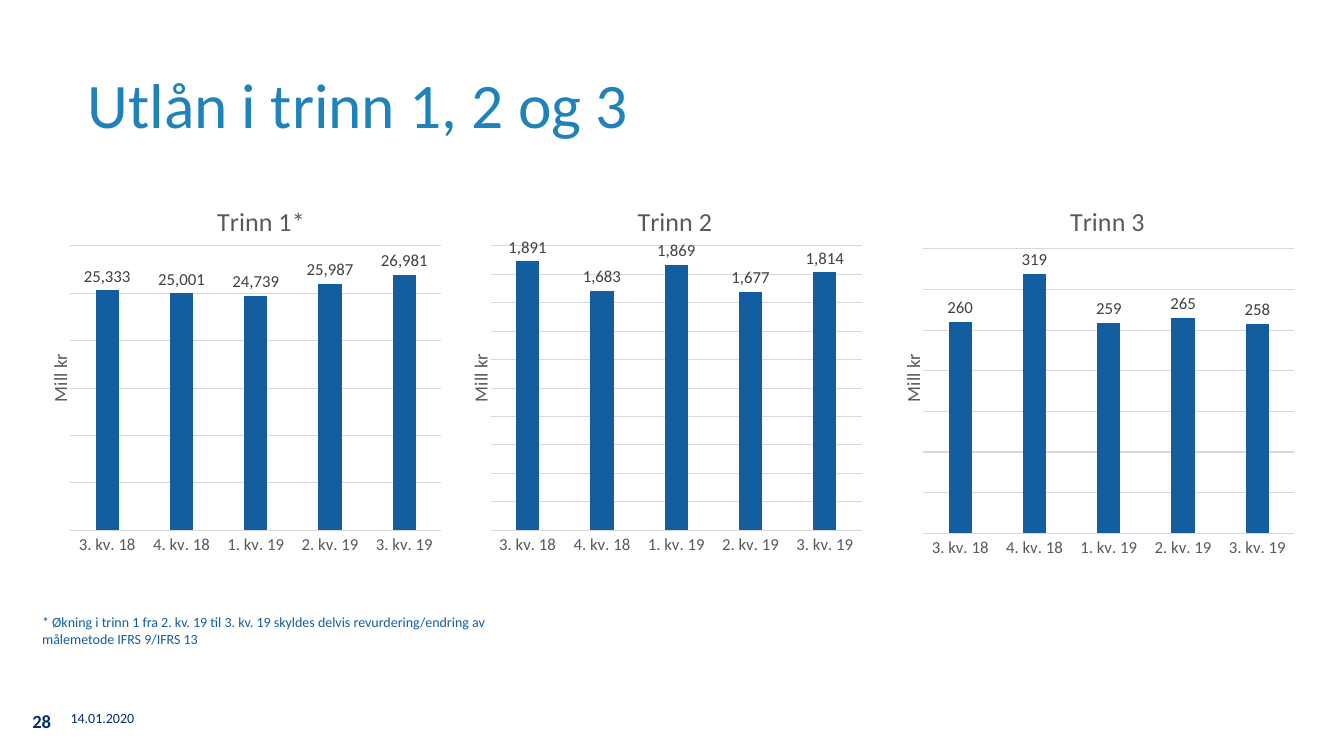
from dataclasses import dataclass
from lxml.etree import SubElement as Sub
from pptx import Presentation
from pptx.chart.data import CategoryChartData as Data
from pptx.dml.color import RGBColor as RGB
from pptx.enum.chart import XL_CHART_TYPE as Kind
from pptx.enum.chart import XL_LABEL_POSITION as Spot
from pptx.enum.chart import XL_TICK_LABEL_POSITION as Tick
from pptx.enum.chart import XL_TICK_MARK as Mark
from pptx.enum.text import MSO_ANCHOR as Anchor
from pptx.enum.text import PP_ALIGN as Align
from pptx.oxml.ns import qn
from pptx.util import Inches, Pt

TITLE = "Utlån i trinn 1, 2 og 3"
UNIT = "Mill kr"
TERMS = ["3. kv. 18", "4. kv. 18", "1. kv. 19", "2. kv. 19", "3. kv. 19"]
# name, left, top of plot as a share of the chart, axis top, step, values
STAGES = [
    ("Trinn 1*", 0.43, 0.128, 30000, 5000, [25333, 25001, 24739, 25987, 26981]),
    ("Trinn 2", 4.6, 0.128, 2000, 200, [1891, 1683, 1869, 1677, 1814]),
    ("Trinn 3", 8.89, 0.136, 350, 50, [260, 319, 259, 265, 258]),
]
NOTE = ("* Økning i trinn 1 fra 2. kv. 19 til 3. kv. 19 skyldes delvis "
        "revurdering/endring av målemetode IFRS 9/IFRS 13")
DATE, PAGE = "14.01.2020", "28"


@dataclass(frozen=True)
class Theme:
    face: str = "Calibri"
    head: str = "1F82BA"
    bar: str = "135EA0"
    foot: str = "032A74"
    text: str = "595959"
    label: str = "404040"
    grid: str = "D9D9D9"
    big: float = 45.3
    name: float = 18.6
    mid: float = 13.3
    tick: float = 12
    small: float = 10


LOOK = Theme()


def style(font, size, color, bold=False):
    font.name, font.size, font.bold = LOOK.face, Pt(size), bold
    font.color.rgb = RGB.from_string(color)


def write(frame, text, size, color, bold=False):
    frame.text = text
    style(frame.paragraphs[0].runs[0].font, size, color, bold)


def clear(frame):
    frame.margin_left = frame.margin_right = 0
    frame.margin_top = frame.margin_bottom = 0


def add_text(slide, box, text, size, color, bold=False):
    frame = slide.shapes.add_textbox(*map(Inches, box)).text_frame
    write(frame, text, size, color, bold)
    return frame


def rule(line):
    line.color.rgb = RGB.from_string(LOOK.grid)
    line.width = Pt(0.75)


def place(node, index, **parts):
    """Fix where a chart part sits, in shares of the chart."""
    for old in node.findall(qn("c:layout")):
        node.remove(old)
    lay = Sub(node, qn("c:layout"))
    node.insert(index, lay)
    man = Sub(lay, qn("c:manualLayout"))
    if "w" in parts:
        Sub(man, qn("c:layoutTarget")).set("val", "inner")
    modes = {"xMode": "edge", "yMode": "edge"}
    for tag, val in (modes | parts).items():
        Sub(man, qn("c:" + tag)).set("val", str(val))


def add_stage(slide, name, left, top, peak, step, vals):
    data = Data(number_format="#,##0")
    data.categories = TERMS
    data.add_series(name, vals)
    box = map(Inches, (left, 1.97, 4.14, 3.67))
    chart = slide.shapes.add_chart(Kind.COLUMN_CLUSTERED, *box, data).chart
    style(chart.font, LOOK.small, "000000")
    chart.has_legend = False
    chart.has_title = True
    plot = chart.plots[0]
    head = chart.chart_title
    write(head.text_frame, name, LOOK.name, LOOK.text)
    place(head._element, 1, x=0.405, y=0.001)
    place(plot._element.getparent(), 0, x=0.064, y=top, w=0.89, h=0.769)

    cat = chart.category_axis
    cat.major_tick_mark = Mark.NONE
    cat.tick_label_position = Tick.NEXT_TO_AXIS
    style(cat.tick_labels.font, LOOK.tick, LOOK.text)
    rule(cat.format.line)

    axis = chart.value_axis
    axis.visible = False
    axis.major_tick_mark = Mark.NONE
    axis.minimum_scale, axis.maximum_scale = 0, peak
    axis.major_unit = step
    rule(axis.major_gridlines.format.line)
    unit = axis.axis_title
    write(unit.text_frame, UNIT, LOOK.mid, LOOK.text)
    body = unit.text_frame._txBody.find(qn("a:bodyPr"))
    body.set("rot", "-5400000")
    body.set("vert", "horz")
    place(unit._element, 1, x=0.001, y=0.41)

    plot.gap_width, plot.overlap = 219, -27
    plot.vary_by_categories = False
    fill = plot.series[0].format.fill
    fill.solid()
    fill.fore_color.rgb = RGB.from_string(LOOK.bar)
    plot.has_data_labels = True
    tags = plot.data_labels
    tags.show_value = True
    tags.position = Spot.OUTSIDE_END
    tags.number_format, tags.number_format_is_linked = "#,##0", False
    style(tags.font, LOOK.tick, LOOK.label)


def main():
    deck = Presentation()
    deck.slide_width, deck.slide_height = Inches(13.33), Inches(7.5)
    slide = deck.slides.add_slide(deck.slide_layouts[5])

    head = slide.shapes.title
    head.left, head.top = Inches(0.87), Inches(0.78)
    head.width, head.height = Inches(11.6), Inches(0.63)
    frame = head.text_frame
    write(frame, TITLE, LOOK.big, LOOK.head)
    clear(frame)
    frame.vertical_anchor = Anchor.MIDDLE
    frame.paragraphs[0].alignment = Align.LEFT
    frame.paragraphs[0].line_spacing = 0.8

    for stage in STAGES:
        add_stage(slide, *stage)

    note = add_text(slide, (0.32, 6.04, 4.64, 0.44), NOTE, LOOK.small, LOOK.bar)
    note.word_wrap = True
    clear(add_text(slide, (0.7, 7.04, 0.65, 0.17), DATE, LOOK.small, LOOK.foot))
    clear(add_text(slide, (0.32, 7.04, 0.22, 0.22), PAGE, LOOK.mid, LOOK.foot, True))
    deck.save("out.pptx")


if __name__ == "__main__":
    main()
